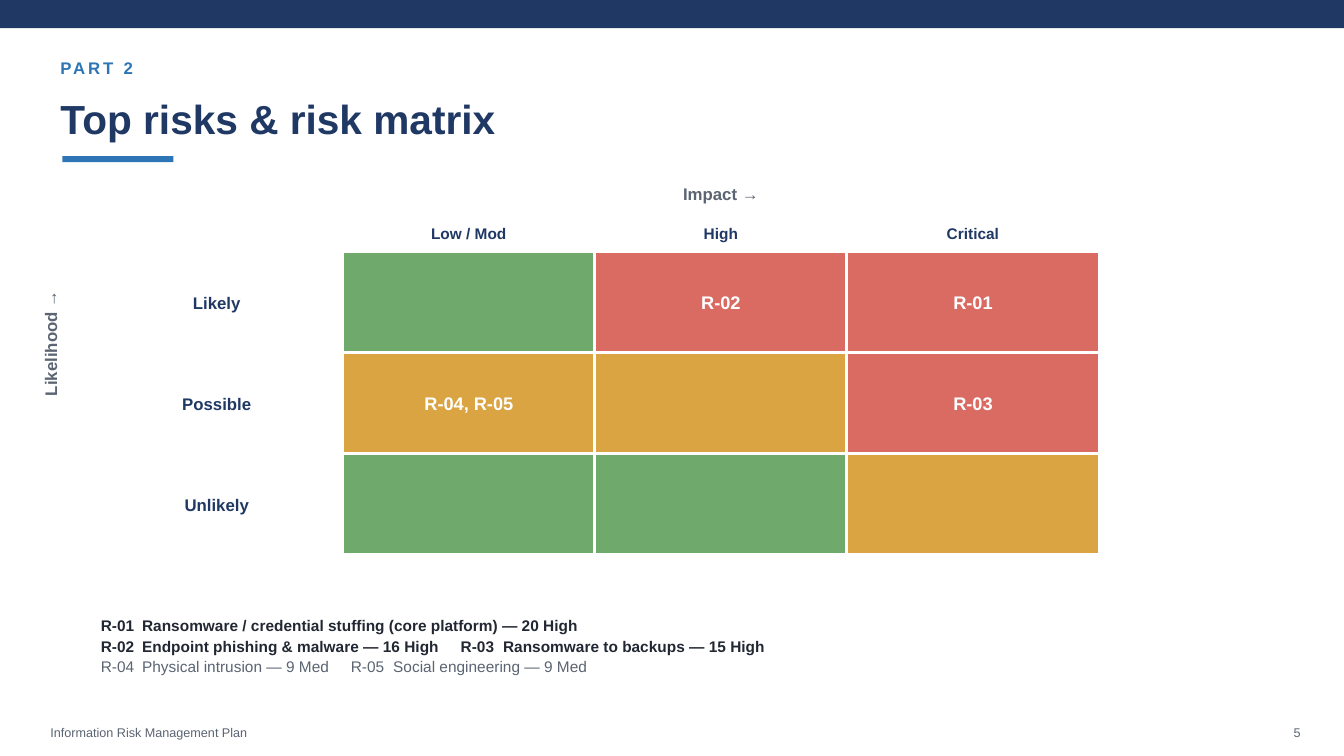
from lxml.etree import SubElement
from pptx import Presentation
from pptx.dml.color import RGBColor
from pptx.enum.shapes import MSO_SHAPE
from pptx.enum.text import MSO_ANCHOR, MSO_AUTO_SIZE, PP_ALIGN
from pptx.oxml.ns import qn
from pptx.util import Inches, Pt

THEME = {
    "font": "Arial",
    "color": {"navy": "1F3864", "blue": "2E75B6", "grey": "5B6472", "ink": "222833",
              "white": "FFFFFF", "low": "6FA96B", "medium": "D9A441", "high": "D96B63"},
    "size": {"title": 29, "cell": 13, "label": 12, "body": 11, "footer": 9},
}


def write(s, lines, size, color, bold=True, align=PP_ALIGN.LEFT, inset=0.05):
    tf = s.text_frame
    frame = {"word_wrap": True, "auto_size": MSO_AUTO_SIZE.NONE,
             "vertical_anchor": MSO_ANCHOR.MIDDLE}
    frame |= {f"margin_{side}": Inches(inset) for side in ("left", "top", "right", "bottom")}
    for name, value in frame.items():
        setattr(tf, name, value)
    for i, line in enumerate(lines):
        p = tf.paragraphs[0] if i == 0 else tf.add_paragraph()
        p.alignment = align
        r = p.add_run()
        r.text = line
        font = {"name": THEME["font"], "size": Pt(THEME["size"][size]), "bold": bold}
        for name, value in font.items():
            setattr(r.font, name, value)
        r.font.color.rgb = RGBColor.from_string(THEME["color"][color])
    return s


def rect(x, y, w, h, color):
    s = shapes.add_shape(MSO_SHAPE.RECTANGLE, Inches(x), Inches(y), Inches(w), Inches(h))
    s.shadow.inherit = False
    s.fill.solid()
    s.fill.fore_color.rgb = RGBColor.from_string(THEME["color"][color])
    s.line.fill.background()
    return s


prs = Presentation()
prs.slide_width, prs.slide_height = Inches(13.33), Inches(7.5)
slide = prs.slides.add_slide(prs.slide_layouts[5])
shapes = slide.shapes

rect(0, 0, 13.33, 0.28, "navy")
rect(0.62, 1.55, 1.1, 0.06, "blue")

title = shapes.title
place = {"left": 0.6, "top": 0.95, "width": 12.1, "height": 0.45}
for name, value in place.items():
    setattr(title, name, Inches(value))
write(title, ["Top risks & risk matrix"], "title", "navy", inset=0)

part = shapes.add_textbox(Inches(0.6), Inches(0.58), Inches(12), Inches(0.19))
write(part, ["PART 2"], "label", "blue", inset=0)
part.text_frame.paragraphs[0].runs[0].font._element.set("spc", "200")

left, top, cell_w, cell_h, pad = 3.4, 2.5, 2.5, 1, 0.05
impacts = ["Low / Mod", "High", "Critical"]
matrix = {
    "Likely": [("low", ""), ("high", "R-02"), ("high", "R-01")],
    "Possible": [("medium", "R-04, R-05"), ("medium", ""), ("high", "R-03")],
    "Unlikely": [("low", ""), ("low", ""), ("medium", "")],
}

labels = [
    ("Impact →", 3.45, 1.78, 7.4, 0.29, 0, "label", "grey"),
    ("Likelihood →", -0.4, 3.26, 1.8, 0.29, 270, "label", "grey"),
]
labels += [(impact, left + col * cell_w + pad, 2.19, cell_w - 2 * pad, 0.26, 0, "body", "navy")
           for col, impact in enumerate(impacts)]
labels += [(likelihood, 0.95, top + row * cell_h + 0.36, 2.4, 0.29, 0, "label", "navy")
           for row, likelihood in enumerate(matrix)]
for text, x, y, w, h, rotation, size, color in labels:
    s = shapes.add_textbox(Inches(x), Inches(y), Inches(w), Inches(h))
    s.rotation = rotation
    write(s, [text], size, color, align=PP_ALIGN.CENTER)

for row, cells in enumerate(matrix.values()):
    for col, (level, risks) in enumerate(cells):
        s = rect(left + col * cell_w, top + row * cell_h, cell_w, cell_h, level)
        s.line.color.rgb = RGBColor.from_string(THEME["color"]["white"])
        s.line.width = Pt(2)
        if risks:
            write(s, [risks], "cell", "white", align=PP_ALIGN.CENTER)

legend = shapes.add_textbox(Inches(0.95), Inches(6.05), Inches(11.6), Inches(0.63))
write(legend, [
    "R-01\tRansomware / credential stuffing (core platform) — 20 High",
    "R-02\tEndpoint phishing & malware — 16 High\tR-03\tRansomware to backups — 15 High",
    "R-04\tPhysical intrusion — 9 Med\tR-05\tSocial engineering — 9 Med",
], "body", "ink")
legend.text_frame.vertical_anchor = MSO_ANCHOR.TOP
tab_stops = [[0.41], [0.41, 3.57, 3.99], [0.41, 2.48, 2.9]]
for p, stops in zip(legend.text_frame.paragraphs, tab_stops):
    p.line_spacing = 1.1
    tabs = SubElement(p._p.get_or_add_pPr(), qn("a:tabLst"))
    for stop in stops:
        SubElement(tabs, qn("a:tab"), pos=str(Inches(stop)), algn="l")
r = legend.text_frame.paragraphs[-1].runs[0]
r.font.bold = False
r.font.color.rgb = RGBColor.from_string(THEME["color"]["grey"])

footers = [("Information Risk Management Plan", 0.5, 10, PP_ALIGN.LEFT),
           ("5", 12.4, 0.5, PP_ALIGN.RIGHT)]
for text, x, w, align in footers:
    s = shapes.add_textbox(Inches(x), Inches(7.2), Inches(w), Inches(0.14))
    write(s, [text], "footer", "grey", bold=False, align=align, inset=0)

prs.save("out.pptx")
